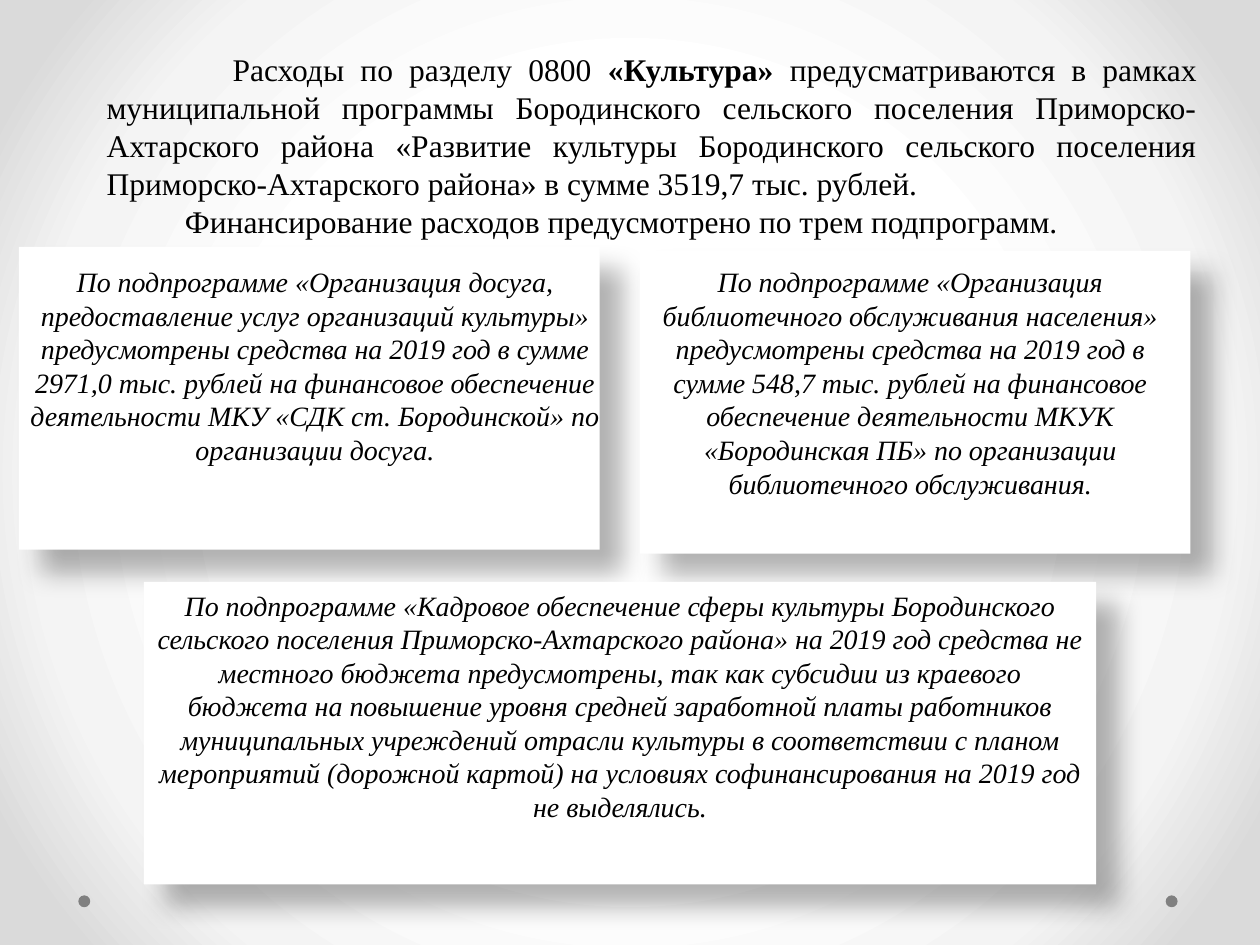
from pptx import Presentation
from pptx.dml.color import RGBColor
from pptx.enum.shapes import MSO_SHAPE
from pptx.enum.text import PP_ALIGN
from pptx.oxml import parse_xml
from pptx.oxml.ns import nsdecls
from pptx.util import Cm, Pt

COLORS = {"text": "000000", "card": "FFFFFF", "dot": "808080", "shadow": "000000"}
BACKGROUND_STOPS = [(50, "FFFFFF"), (76, "F4F4F4"), (92, "DADADA")]

INTRO = [
    (2.54, [("Расходы по разделу 0800 ", False), ("«Культура» ", True),
            ("предусматриваются в рамках муниципальной программы Бородинского "
             "сельского поселения Приморско-Ахтарского района «Развитие культуры "
             "Бородинского сельского поселения Приморско-Ахтарского района» "
             "в сумме 3519,7 тыс. рублей.", False)]),
    (1.58, [("Финансирование расходов предусмотрено по трем подпрограмм.", False)]),
]

SUBPROGRAMMES = [
    ((0.38, 4.98, 11.71, 6.1), (0, 5.21, 12.7, 4.37), [
        "По подпрограмме «Организация досуга, предоставление услуг организаций "
        "культуры» предусмотрены средства на 2019 год в сумме 2971,0 тыс. рублей "
        "на финансовое обеспечение деятельности МКУ «СДК ст. Бородинской» "
        "по организации досуга."]),
    ((12.9, 5.06, 11.1, 6.1), (12.7, 5.21, 11.3, 5.05), [
        "По подпрограмме «Организация библиотечного обслуживания населения»",
        "предусмотрены средства на 2019 год в сумме 548,7 тыс. рублей на финансовое "
        "обеспечение деятельности МКУК «Бородинская ПБ» по организации "
        "библиотечного обслуживания."]),
    ((2.9, 11.73, 19.2, 6.1), (2.9, 11.73, 19.2, 5.13), [
        "По подпрограмме «Кадровое обеспечение сферы культуры Бородинского сельского "
        "поселения Приморско-Ахтарского района» на 2019 год средства не местного "
        "бюджета предусмотрены, так как субсидии из краевого бюджета на повышение "
        "уровня средней заработной платы работников муниципальных учреждений отрасли "
        "культуры в соответствии с планом мероприятий (дорожной картой) на условиях "
        "софинансирования на 2019 год не выделялись."]),
]


class SlideBuilder:
    """Hold the text style and the current slide, and add its elements."""

    font_name = "Times New Roman"
    intro_size = 18
    card_size = 16

    def __init__(self, slide):
        self.slide = slide

    def add_background(self):
        stops = "".join(
            f'<a:gs pos="{position * 1000}"><a:srgbClr val="{color}"/></a:gs>'
            for position, color in BACKGROUND_STOPS)
        background = parse_xml(
            f'<p:bg {nsdecls("p", "a")}><p:bgPr><a:gradFill rotWithShape="1">'
            f'<a:gsLst>{stops}</a:gsLst><a:path path="circle">'
            '<a:fillToRect l="50000" t="50000" r="50000" b="50000"/></a:path>'
            '</a:gradFill><a:effectLst/></p:bgPr></p:bg>')
        self.slide.element.cSld.insert(0, background)

    def add_plain_shape(self, kind, box, color):
        shape = self.slide.shapes.add_shape(kind, *map(Cm, box))
        shape.shadow.inherit = False
        shape.fill.solid()
        shape.fill.fore_color.rgb = RGBColor.from_string(COLORS[color])
        shape.line.fill.background()
        return shape

    def add_dot(self, left):
        self.add_plain_shape(MSO_SHAPE.OVAL, (left, 18.05, 0.24, 0.24), "dot")

    def add_card(self, box):
        shape = self.add_plain_shape(MSO_SHAPE.RECTANGLE, box, "card")
        effects = shape.element.spPr.find(
            "{http://schemas.openxmlformats.org/drawingml/2006/main}effectLst")
        effects.append(parse_xml(
            f'<a:outerShdw {nsdecls("a")} blurRad="{Pt(15)}" dist="{Pt(18)}" '
            f'dir="{45 * 60000}" algn="tl" rotWithShape="0">'
            f'<a:srgbClr val="{COLORS["shadow"]}"><a:alpha val="30000"/></a:srgbClr>'
            '</a:outerShdw>'))

    def add_text_frame(self, box):
        text_frame = self.slide.shapes.add_textbox(*map(Cm, box)).text_frame
        text_frame.word_wrap = True
        return text_frame

    def format_run(self, run, size, bold=False, italic=False):
        run.font.name = self.font_name
        run.font.size = Pt(size)
        run.font.bold = bold
        run.font.italic = italic
        run.font.color.rgb = RGBColor.from_string(COLORS["text"])

    def add_intro(self, box, paragraphs):
        text_frame = self.add_text_frame(box)
        for index, (indent, parts) in enumerate(paragraphs):
            paragraph = text_frame.add_paragraph() if index else text_frame.paragraphs[0]
            paragraph.alignment = PP_ALIGN.JUSTIFY
            paragraph._p.get_or_add_pPr().set("indent", str(Cm(indent)))
            for text, bold in parts:
                run = paragraph.add_run()
                run.text = text
                self.format_run(run, self.intro_size, bold=bold)

    def add_card_text(self, box, lines):
        text_frame = self.add_text_frame(box)
        text_frame.text = "\n".join(lines)
        for paragraph in text_frame.paragraphs:
            paragraph.alignment = PP_ALIGN.CENTER
            for run in paragraph.runs:
                self.format_run(run, self.card_size, italic=True)


def main():
    presentation = Presentation()
    presentation.slide_width, presentation.slide_height = Cm(25.4), Cm(19.05)
    builder = SlideBuilder(presentation.slides.add_slide(presentation.slide_layouts[6]))
    builder.add_background()
    for left in (23.5, 1.58):
        builder.add_dot(left)
    for card_box, _, _ in SUBPROGRAMMES:
        builder.add_card(card_box)
    builder.add_intro((1.9, 0.89, 22.48, 4.11), INTRO)
    for _, text_box, lines in SUBPROGRAMMES:
        builder.add_card_text(text_box, lines)
    presentation.save("out.pptx")


if __name__ == "__main__":
    main()
